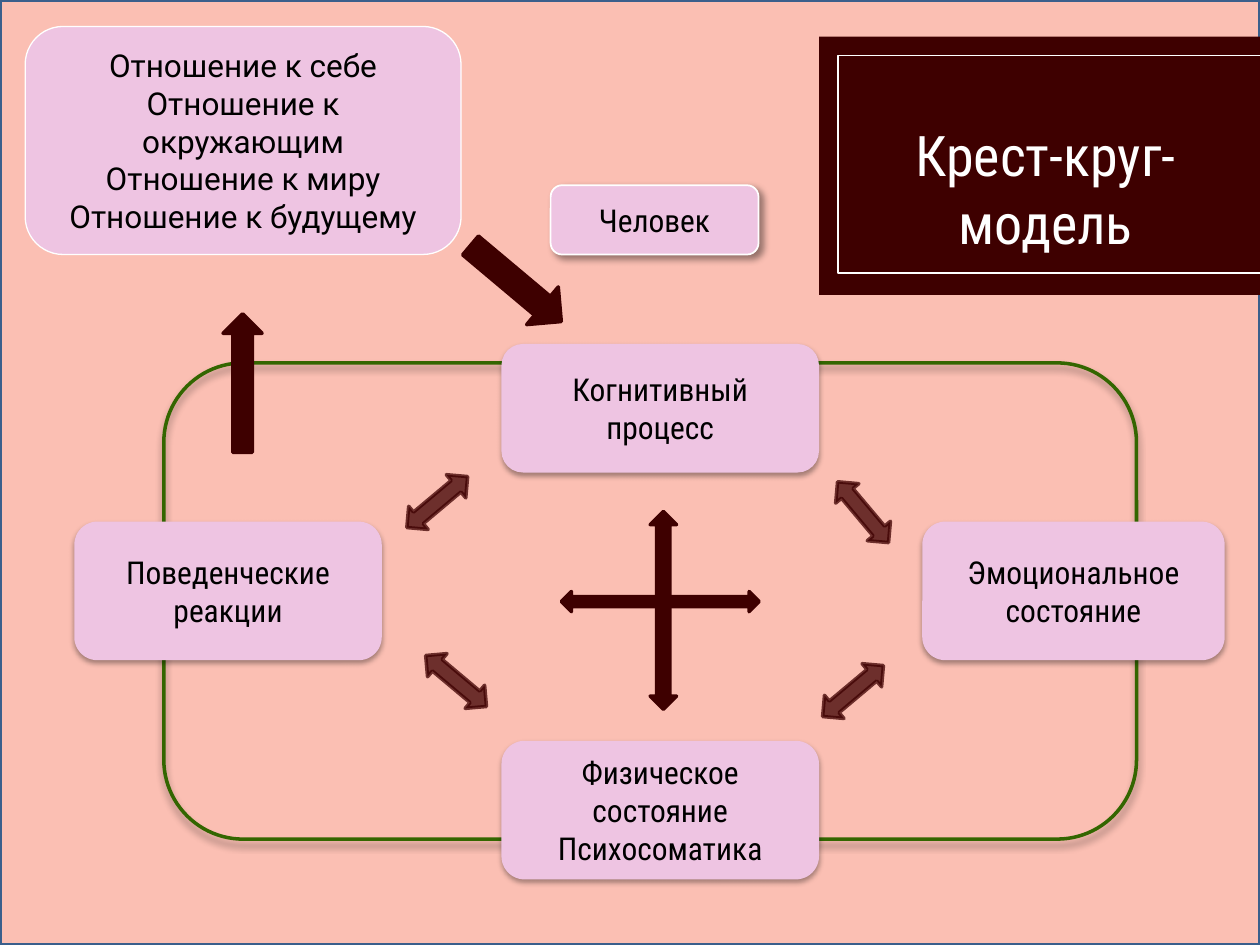
from dataclasses import dataclass
from typing import NamedTuple, Optional

from lxml import etree
from pptx import Presentation
from pptx.dml.color import RGBColor
from pptx.enum.shapes import MSO_SHAPE
from pptx.enum.text import MSO_ANCHOR, MSO_AUTO_SIZE, PP_ALIGN
from pptx.oxml.ns import qn
from pptx.util import Inches, Pt

RECTANGLE = MSO_SHAPE.RECTANGLE
ROUNDED = MSO_SHAPE.ROUNDED_RECTANGLE
TWO_WAY = MSO_SHAPE.UP_DOWN_ARROW
ONE_WAY = MSO_SHAPE.DOWN_ARROW
CENTER = PP_ALIGN.CENTER
TOP = MSO_ANCHOR.TOP
MIDDLE = MSO_ANCHOR.MIDDLE
NO_AUTOFIT = MSO_AUTO_SIZE.NONE

COLUMNS, ROWS = 100, 75
WIDTH, HEIGHT = Inches(10), Inches(7.5)
TITLE_ONLY = 5


@dataclass(frozen=True)
class Theme:
    backdrop: str = "FBBFB3"
    frame: str = "3A5F8C"
    dark: str = "3E0000"
    card: str = "EEC4E2"
    ring: str = "336600"
    light: str = "FFFFFF"
    ink: str = "000000"
    wide_font: str = "Roboto"
    narrow_font: str = "Roboto Condensed"
    title_size: float = 32
    body_size: float = 18


THEME = Theme()


class Area(NamedTuple):
    column: float
    row: float
    columns: float
    rows: float


class Shadow(NamedTuple):
    opacity: int
    blur: float
    distance: float
    angle: int


class Outline(NamedTuple):
    color: str
    width: float


@dataclass(frozen=True)
class Card:
    area: Area
    lines: tuple[str, ...]
    font: str = THEME.narrow_font
    outline: Optional[Outline] = None
    shadow: Optional[Shadow] = Shadow(35, 3.1, 1.8, 90)


@dataclass(frozen=True)
class Arrow:
    kind: int
    area: Area
    rotation: float = 0
    opacity: int = 100


CARDS = (
    Card(Area(2, 2.1, 34.6, 18.1),
         ("Отношение к себе", "Отношение к окружающим",
          "Отношение к миру", "Отношение к будущему"),
         THEME.wide_font, Outline(THEME.light, 0), None),
    Card(Area(39.8, 27.3, 25.2, 10.2), ("Когнитивный процесс",)),
    Card(Area(39.8, 58.8, 25.2, 11), ("Физическое состояние", "Психосоматика")),
    Card(Area(73.2, 41.4, 24, 11), ("Эмоциональное состояние",)),
    Card(Area(5.9, 41.4, 24.4, 11), ("Поведенческие реакции",)),
    Card(Area(43.7, 14.7, 16.5, 5.5), ("Человек",),
         outline=Outline(THEME.light, 1), shadow=Shadow(40, 4, 3, 45)),
)

ARROWS = (
    Arrow(TWO_WAY, Area(51.6, 40.6, 2.1, 15.7)),
    Arrow(TWO_WAY, Area(51.6, 39.9, 1.6, 15.7), 90),
    Arrow(TWO_WAY, Area(67.3, 37.5, 2.4, 6.3), 320, 75),
    Arrow(TWO_WAY, Area(66.5, 51.7, 2.4, 6.3), 50, 75),
    Arrow(TWO_WAY, Area(35, 50.9, 2.4, 6.3), 310, 75),
    Arrow(TWO_WAY, Area(33.5, 36.7, 2.4, 6.3), 50, 75),
    Arrow(ONE_WAY, Area(39, 17.8, 3.9, 9.4), 310),
    Arrow(ONE_WAY, Area(17.7, 24.9, 3.1, 11), 180),
)


def place(shape, area: Area) -> None:
    shape.left = int(WIDTH * area.column / COLUMNS)
    shape.top = int(HEIGHT * area.row / ROWS)
    shape.width = int(WIDTH * area.columns / COLUMNS)
    shape.height = int(HEIGHT * area.rows / ROWS)


def add_shadow(shape, shadow: Shadow) -> None:
    effects = shape._element.spPr.find(qn("a:effectLst"))
    outer = etree.SubElement(
        effects, qn("a:outerShdw"), blurRad=str(Pt(shadow.blur)),
        dist=str(Pt(shadow.distance)), dir=str(shadow.angle * 60000),
        algn="ctr", rotWithShape="0")
    color = etree.SubElement(outer, qn("a:srgbClr"), val=THEME.ink)
    etree.SubElement(color, qn("a:alpha"), val=str(shadow.opacity * 1000))


def add_figure(page, kind: int, area: Area, fill: Optional[str] = None,
               outline: Optional[Outline] = None,
               shadow: Optional[Shadow] = None):
    shape = page.shapes.add_shape(kind, 0, 0, 0, 0)
    place(shape, area)
    if fill:
        shape.fill.solid()
        shape.fill.fore_color.rgb = RGBColor.from_string(fill)
    else:
        shape.fill.background()
    if outline:
        shape.line.color.rgb = RGBColor.from_string(outline.color)
        shape.line.width = Pt(outline.width)
    else:
        shape.line.fill.background()
    shape.shadow.inherit = False
    if shadow:
        add_shadow(shape, shadow)
    return shape


def write(frame, lines: tuple[str, ...], font: str, size: float, color: str) -> None:
    frame.word_wrap = True
    for index, line in enumerate(lines):
        para = frame.add_paragraph() if index else frame.paragraphs[0]
        para.alignment = CENTER
        span = para.add_run()
        span.text = line
        span.font.name = font
        span.font.size = Pt(size)
        span.font.color.rgb = RGBColor.from_string(color)


def add_card(page, card: Card) -> None:
    box = add_figure(page, ROUNDED, card.area, THEME.card, card.outline, card.shadow)
    box.text_frame.vertical_anchor = MIDDLE
    write(box.text_frame, card.lines, card.font, THEME.body_size, THEME.ink)


def add_arrow(page, arrow: Arrow) -> None:
    shape = add_figure(page, arrow.kind, arrow.area, THEME.dark, Outline(THEME.dark, 2))
    shape.rotation = arrow.rotation
    if arrow.opacity < 100:
        for color in shape._element.spPr.iter(qn("a:srgbClr")):
            etree.SubElement(color, qn("a:alpha"), val=str(arrow.opacity * 1000))


def add_title(page) -> None:
    title = page.shapes.title
    place(title, Area(65, 2.9, 35, 20.5))
    title.fill.solid()
    title.fill.fore_color.rgb = RGBColor.from_string(THEME.dark)
    frame = title.text_frame
    frame.auto_size = NO_AUTOFIT
    frame.vertical_anchor = TOP
    frame.margin_top = Inches(0.67)
    frame.margin_left = Inches(0.2)
    write(frame, ("Крест-круг-модель",), THEME.narrow_font,
          THEME.title_size, THEME.light)


def main() -> None:
    deck = Presentation()
    deck.slide_width, deck.slide_height = WIDTH, HEIGHT
    page = deck.slides.add_slide(deck.slide_layouts[TITLE_ONLY])
    backdrop = add_figure(page, RECTANGLE, Area(0, 0, COLUMNS, ROWS),
                          THEME.backdrop, Outline(THEME.frame, 2))
    page.shapes.title._element.addprevious(backdrop._element)
    add_title(page)
    add_figure(page, ROUNDED, Area(13, 28.8, 77.2, 37.8),
               outline=Outline(THEME.ring, 2), shadow=Shadow(40, 4, 3, 90))
    for card in CARDS:
        add_card(page, card)
    for arrow in ARROWS:
        add_arrow(page, arrow)
    add_figure(page, RECTANGLE, Area(66.5, 4.4, 35.4, 17.3),
               outline=Outline(THEME.light, 1))
    deck.save("out.pptx")


if __name__ == "__main__":
    main()
